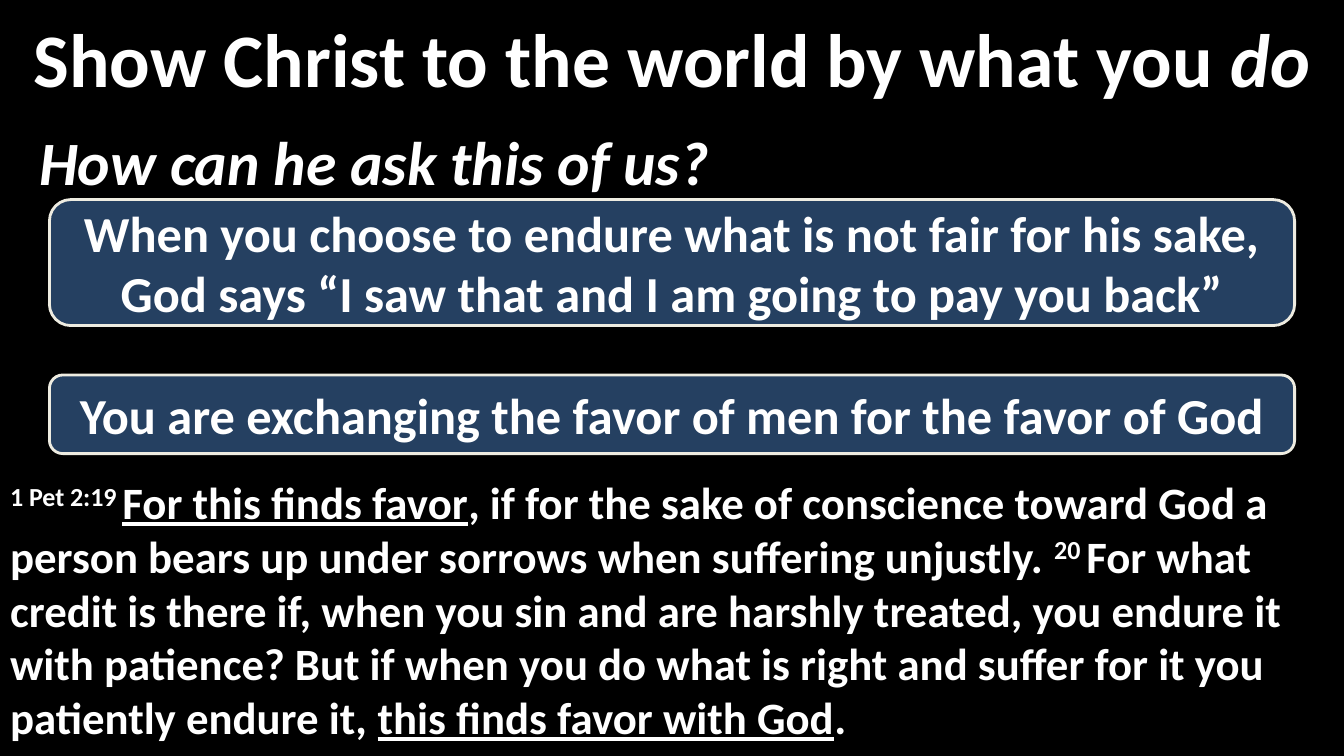
"""Build the slide on showing Christ to the world by what you do."""
import dataclasses
import typing

import pptx
import pptx.dml.color
import pptx.enum.shapes
import pptx.enum.text
import pptx.util

Inches = pptx.util.Inches
ALIGN = pptx.enum.text.PP_ALIGN
ANCHOR = pptx.enum.text.MSO_ANCHOR
WHITE, BLACK, NAVY, CREAM = "FFFFFF", "000000", "254061", "EEECE1"


@dataclasses.dataclass(frozen=True)
class Phrase:
    text: str
    italic: bool = False
    underline: bool = False
    raised: bool = False


@dataclasses.dataclass(frozen=True)
class Callout:
    phrase: Phrase
    left: float
    top: float
    width: float
    height: float
    size: int = 36
    filled: bool = True


TITLE = [Phrase("Show Christ to the world by what you "), Phrase("do", italic=True)]
VERSE = [
    Phrase("1 Pet 2:19 ", raised=True),
    Phrase("For this finds favor", underline=True),
    Phrase(", if for the sake of conscience toward God a person bears up "
           "under sorrows when suffering unjustly. "),
    Phrase("20 ", raised=True),
    Phrase("For what credit is there if, when you sin and are harshly treated, "
           "you endure it with patience? But if when you do what is right and "
           "suffer for it you patiently endure it, "),
    Phrase("this finds favor with God", underline=True),
    Phrase("."),
]
CALLOUTS = [
    Callout(Phrase("You are exchanging the favor of men for the favor of God"),
            0.49, 3.72, 12.35, 0.78),
    Callout(Phrase("When you choose to endure what is not fair for his sake, "
                   "God says “I saw that and I am going to pay you back”"),
            0.49, 1.98, 12.35, 1.25),
    Callout(Phrase("How can he ask this of us?", italic=True),
            0.13, 1.21, 7.17, 0.78, size=44, filled=False),
]


def paint(color_owner: typing.Any, hex_color: str) -> None:
    """Give a fill or a font a solid colour."""
    if hasattr(color_owner, "solid"):
        color_owner.solid()
        color_owner = color_owner.fore_color
    else:
        color_owner = color_owner.color
    color_owner.rgb = pptx.dml.color.RGBColor.from_string(hex_color)


def write(shape: typing.Any, phrases: list[Phrase], size: int,
          align: typing.Any, anchor: typing.Any) -> None:
    """Write one paragraph of formatted phrases into a shape."""
    frame = shape.text_frame
    frame.word_wrap = True
    frame.auto_size = pptx.enum.text.MSO_AUTO_SIZE.NONE
    frame.vertical_anchor = anchor
    paragraph = frame.paragraphs[0]
    paragraph.alignment = align
    paragraph.space_before = pptx.util.Pt(0)
    for phrase in phrases:
        run = paragraph.add_run()
        run.text = phrase.text
        font = run.font
        font.name, font.size, font.bold = "Calibri", pptx.util.Pt(size), True
        font.italic, font.underline = phrase.italic, phrase.underline
        paint(font, WHITE)
        if phrase.raised:
            run._r.get_or_add_rPr().set("baseline", "30000")


def place(shape: typing.Any, left: float, top: float, width: float, height: float) -> None:
    """Move and size a placeholder."""
    shape.left, shape.top = Inches(left), Inches(top)
    shape.width, shape.height = Inches(width), Inches(height)


def remove_bullet(paragraph: typing.Any) -> None:
    """Set a paragraph flush left without a bullet."""
    properties = paragraph._p.get_or_add_pPr()
    properties.set("marL", "0")
    properties.set("indent", "0")
    properties.append(pptx.oxml.parse_xml(
        '<a:buNone xmlns:a="http://schemas.openxmlformats.org/drawingml/2006/main"/>'))


def draw_callout(slide: typing.Any, callout: Callout) -> None:
    """Draw a rounded callout with centred text."""
    bubble = slide.shapes.add_shape(
        pptx.enum.shapes.MSO_SHAPE.ROUNDED_RECTANGULAR_CALLOUT,
        Inches(callout.left), Inches(callout.top),
        Inches(callout.width), Inches(callout.height))
    bubble.shadow.inherit = False
    for index, value in enumerate((-0.22, 0.5, 0.17)):
        bubble.adjustments[index] = value
    if callout.filled:
        paint(bubble.fill, NAVY)
        paint(bubble.line.fill, CREAM)
        bubble.line.width = pptx.util.Pt(2)
    else:
        bubble.fill.background()
        bubble.line.fill.background()
    write(bubble, [callout.phrase], callout.size, ALIGN.CENTER, ANCHOR.MIDDLE)


def main() -> None:
    """Build and save the presentation."""
    deck = pptx.Presentation()
    deck.slide_width, deck.slide_height = Inches(13.33), Inches(7.5)
    slide = deck.slides.add_slide(deck.slide_layouts[1])
    paint(slide.background.fill, BLACK)

    title, verse = slide.placeholders
    place(title, 0, 0.04, 13.33, 1.05)
    write(title, TITLE, 54, ALIGN.CENTER, ANCHOR.MIDDLE)
    place(verse, 0, 4.66, 13.33, 2.84)
    paint(verse.fill, BLACK)
    write(verse, VERSE, 32, ALIGN.LEFT, ANCHOR.TOP)
    remove_bullet(verse.text_frame.paragraphs[0])

    for callout in CALLOUTS:
        draw_callout(slide, callout)
    deck.save("out.pptx")


if __name__ == "__main__":
    main()
